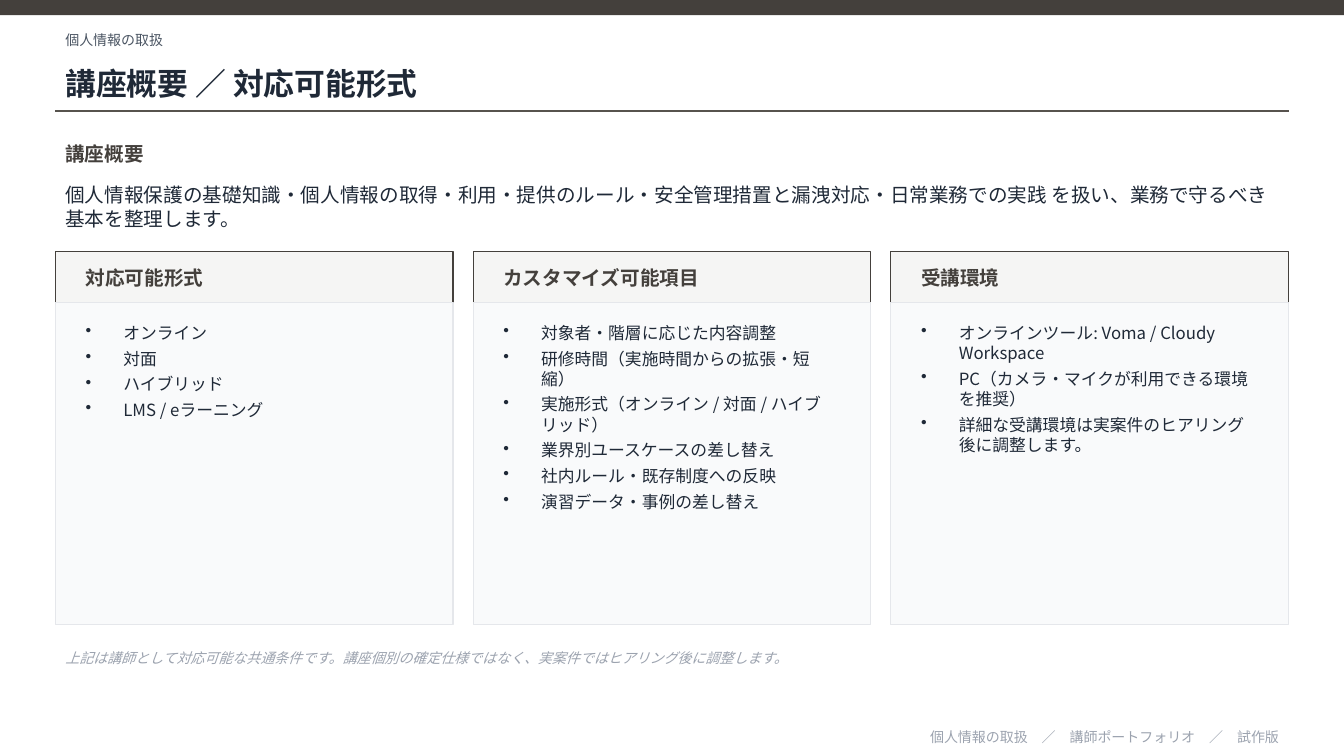
from lxml.etree import SubElement
from pptx import Presentation
from pptx.dml.color import RGBColor
from pptx.enum.shapes import MSO_CONNECTOR as Link, MSO_SHAPE as Shape
from pptx.enum.text import MSO_ANCHOR as Anchor, PP_ALIGN as Align
from pptx.oxml.ns import qn
from pptx.util import Pt

DARK = RGBColor(0x44, 0x40, 0x3C)
RULE = RGBColor(0x57, 0x53, 0x4E)
INK = RGBColor(0x1F, 0x29, 0x37)
SLATE = RGBColor(0x4B, 0x55, 0x63)
MUTED = RGBColor(0x9C, 0xA3, 0xAF)
HEAD = RGBColor(0xF5, 0xF5, 0xF4)
PANEL = RGBColor(0xF9, 0xFA, 0xFB)
EDGE = RGBColor(0xE5, 0xE7, 0xEB)

WIDTH, HEIGHT = 960, 540
LEFT, SPAN = 39.6, 880.8
GAP, PAD = 14.4, 14.4

CARDS = [
    ("対応可能形式", ["オンライン", "対面", "ハイブリッド", "LMS / eラーニング"]),
    ("カスタマイズ可能項目", [
        "対象者・階層に応じた内容調整",
        "研修時間（実施時間からの拡張・短縮）",
        "実施形式（オンライン / 対面 / ハイブリッド）",
        "業界別ユースケースの差し替え",
        "社内ルール・既存制度への反映",
        "演習データ・事例の差し替え",
    ]),
    ("受講環境", [
        "オンラインツール: Voma / Cloudy Workspace",
        "PC（カメラ・マイクが利用できる環境を推奨）",
        "詳細な受講環境は実案件のヒアリング後に調整します。",
    ]),
]


class Page:
    font = "Noto Sans CJK JP"
    indent = 27

    def __init__(self, slide):
        self.shapes = slide.shapes

    def rect(self, x, y, w, h, fill, edge=None):
        box = self.shapes.add_shape(Shape.RECTANGLE, Pt(x), Pt(y), Pt(w), Pt(h))
        box.shadow.inherit = False
        box.fill.solid()
        box.fill.fore_color.rgb = fill
        if edge is None:
            box.line.fill.background()
        else:
            box.line.color.rgb = edge
            box.line.width = Pt(0.75)

    def rule(self, x, y, w):
        line = self.shapes.add_connector(Link.STRAIGHT, Pt(x), Pt(y), Pt(x + w), Pt(y))
        line.line.color.rgb = RULE
        line.line.width = Pt(1)
        SubElement(line.element.spPr, qn("a:effectLst"))

    def text(self, x, y, w, h, text, size=14, color=INK, bold=False,
             italic=False, align=Align.LEFT, anchor=Anchor.MIDDLE, bullet=False):
        """Add a text box with one paragraph per line of text."""
        frame = self.shapes.add_textbox(Pt(x), Pt(y), Pt(w), Pt(h)).text_frame
        frame.word_wrap = True
        frame.vertical_anchor = anchor
        for i, part in enumerate(text.split("\n")):
            para = frame.add_paragraph() if i else frame.paragraphs[0]
            para.alignment = align
            if bullet:
                self.bullet(para)
            run = para.add_run()
            run.text = part
            font = run.font
            font.name, font.size = self.font, Pt(size)
            font.bold, font.italic = bold, italic
            font.color.rgb = color
            SubElement(run._r.get_or_add_rPr(), qn("a:ea"), typeface=self.font)

    def bullet(self, para):
        para.space_after = Pt(4)
        props = para._p.get_or_add_pPr()
        props.set("marL", str(Pt(self.indent)))
        props.set("indent", str(-Pt(self.indent)))
        SubElement(props, qn("a:buChar"), char="•")

    def card(self, x, w, title, items):
        inner = w - 2 * PAD
        self.rect(x, 180, w, 36, HEAD, DARK)
        self.text(x + PAD, 180, inner, 36, title, color=DARK, bold=True)
        self.rect(x, 216, w, 230.4, PANEL, EDGE)
        self.text(x + PAD, 226.8, inner, 205.2, "\n".join(items), size=12,
                  anchor=Anchor.TOP, bullet=True)


def main():
    deck = Presentation()
    deck.slide_width, deck.slide_height = Pt(WIDTH), Pt(HEIGHT)
    page = Page(deck.slides.add_slide(deck.slide_layouts[6]))

    page.rect(0, 0, WIDTH, 10.8, DARK)
    page.text(LEFT, 18, SPAN, 21.6, "個人情報の取扱", size=10, color=SLATE)
    page.text(LEFT, 39.6, SPAN, 39.6, "講座概要 ／ 対応可能形式", size=22, bold=True)
    page.rule(LEFT, 79.2, SPAN)
    page.text(LEFT, 97.2, SPAN, 25.2, "講座概要", color=DARK, bold=True)
    page.text(LEFT, 126, SPAN, 43.2,
              "個人情報保護の基礎知識・個人情報の取得・利用・提供のルール・"
              "安全管理措置と漏洩対応・日常業務での実践 を扱い、"
              "業務で守るべき基本を整理します。")

    wide = (SPAN - GAP * (len(CARDS) - 1)) / len(CARDS)
    for i, (title, items) in enumerate(CARDS):
        page.card(LEFT + i * (wide + GAP), wide, title, items)

    page.text(LEFT, 457.2, SPAN, 25.2,
              "上記は講師として対応可能な共通条件です。"
              "講座個別の確定仕様ではなく、実案件ではヒアリング後に調整します。",
              size=10, color=MUTED, italic=True)
    page.text(LEFT, 518.4, SPAN, 15.84, "個人情報の取扱　／　講師ポートフォリオ　／　試作版",
              size=10, color=MUTED, align=Align.RIGHT)
    deck.save("out.pptx")


if __name__ == "__main__":
    main()
